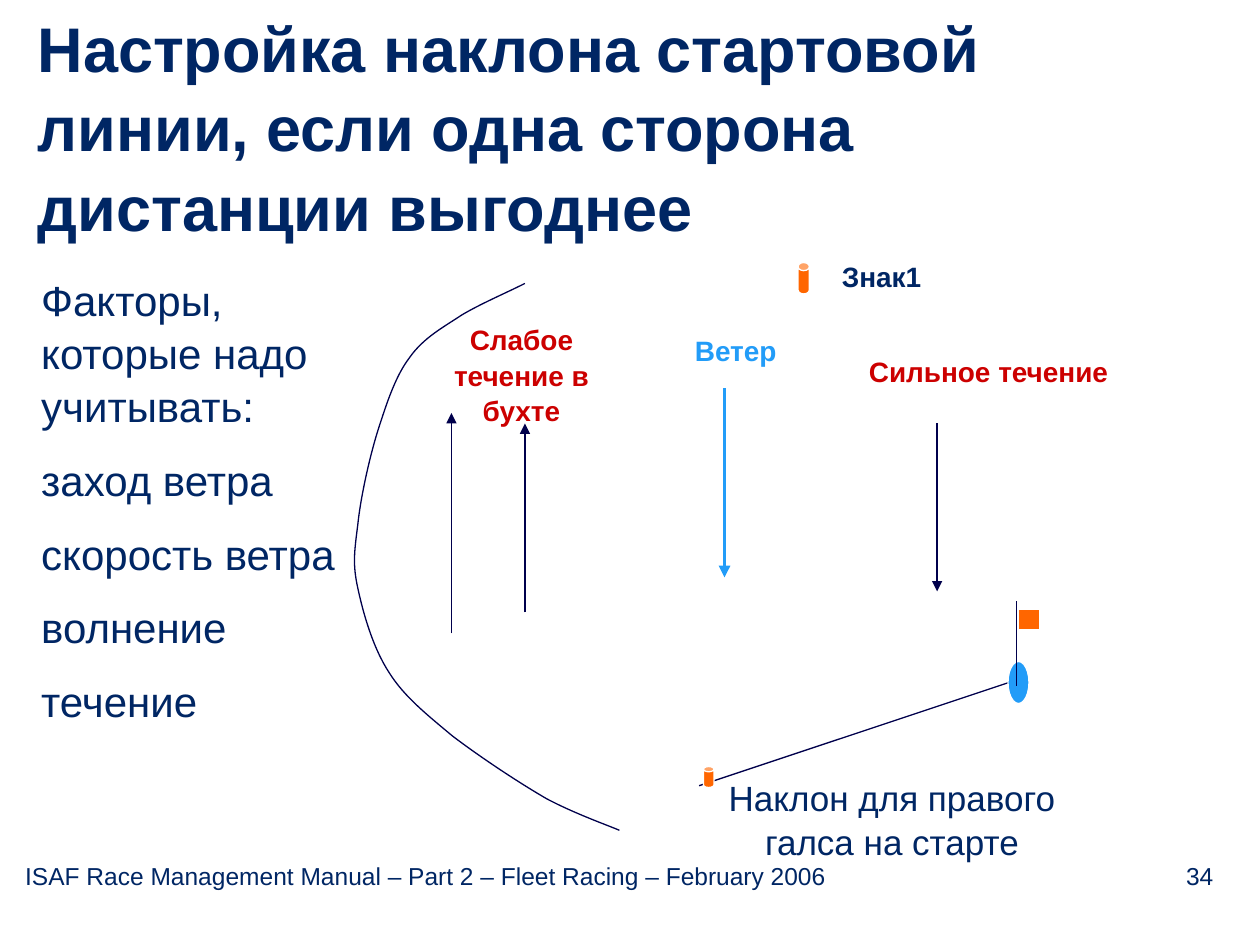
from dataclasses import dataclass

from lxml.etree import SubElement
from pptx import Presentation
from pptx.dml.color import RGBColor
from pptx.enum.shapes import MSO_CONNECTOR as Connector, MSO_SHAPE as Preset
from pptx.enum.text import MSO_ANCHOR as Anchor, PP_ALIGN as Align
from pptx.oxml.ns import qn
from pptx.util import Pt


@dataclass(frozen=True)
class Theme:
    font: str = "Arial"
    navy: RGBColor = RGBColor(0x00, 0x26, 0x64)
    ink: RGBColor = RGBColor(0x00, 0x00, 0x4C)
    red: RGBColor = RGBColor(0xCC, 0x00, 0x00)
    blue: RGBColor = RGBColor(0x22, 0x9C, 0xF8)
    orange: RGBColor = RGBColor(0xFF, 0x66, 0x00)
    white: RGBColor = RGBColor(0xFF, 0xFF, 0xFF)
    title_size: float = 36
    body_size: float = 24
    note_size: float = 20
    label_size: float = 16
    footer_size: float = 14
    line_spacing: float = 1.05
    thin: float = 0.75
    thick: float = 2.25


THEME = Theme()

# Start point, then two control points and an end point for each curve
SHORE = [
    (300, 162),
    (288, 168), (275, 173.5), (264, 180),
    (253.5, 187), (242, 193), (234, 204.5),
    (226, 215), (221, 230.5), (216, 246),
    (211, 262), (206, 285), (204.5, 300),
    (202.5, 315.5), (201.5, 322.5), (204.5, 336),
    (207.5, 350), (213, 370), (222.5, 384.5),
    (231, 398), (243.5, 408), (258.5, 420.5),
    (273.5, 432), (296, 447), (312.5, 456.5),
    (328.5, 465), (347, 471.5), (354, 474.5),
]


def points(values):
    return [Pt(value) for value in values]


def add_text(slide, box, paragraphs, size, color=THEME.navy, bold=False,
             align=Align.LEFT, anchor=Anchor.TOP, margins=None, right_tab=None):
    frame = slide.shapes.add_textbox(*points(box)).text_frame
    frame.word_wrap = True
    frame.vertical_anchor = anchor
    if margins is not None:
        frame.margin_left = frame.margin_right = Pt(margins)
        frame.margin_top = frame.margin_bottom = Pt(margins)
    for index, text in enumerate(paragraphs):
        paragraph = frame.add_paragraph() if index else frame.paragraphs[0]
        paragraph.text = text
        paragraph.alignment = align
        paragraph.line_spacing = THEME.line_spacing
        paragraph.space_before = Pt(size / 2 if index else 0)
        if right_tab is not None:
            tabs = SubElement(paragraph._p.get_or_add_pPr(), qn("a:tabLst"))
            SubElement(tabs, qn("a:tab"), pos=str(Pt(right_tab)), algn="r")
        font = paragraph.font
        font.name, font.size, font.bold = THEME.font, Pt(size), bold
        font.color.rgb = color


def add_label(slide, box, text, color, align=Align.LEFT):
    add_text(slide, box, [text], THEME.label_size, color, True, align)


def add_line(slide, start, end, color=THEME.ink, width=THEME.thin, arrow=False):
    line = slide.shapes.add_connector(
        Connector.STRAIGHT, *points(start), *points(end))
    line.line.color.rgb = color
    line.line.width = Pt(width)
    if arrow:
        SubElement(line.line._get_or_add_ln(), qn("a:tailEnd"), type="triangle")
    SubElement(line._element.spPr, qn("a:effectLst"))


def add_preset(slide, preset, box, color, adjustment=None):
    shape = slide.shapes.add_shape(preset, *points(box))
    shape.shadow.inherit = False
    shape.fill.solid()
    shape.fill.fore_color.rgb = color
    shape.line.color.rgb = THEME.white
    shape.line.width = Pt(THEME.thin)
    if adjustment is not None:
        shape.adjustments[0] = adjustment


def add_curve(slide, vertices):
    start, *rest = [points(vertex) for vertex in vertices]
    builder = slide.shapes.build_freeform(*start)
    builder.add_line_segments(rest, close=False)
    shape = builder.convert_to_shape()
    shape.shadow.inherit = False
    shape.fill.background()
    shape.line.color.rgb = THEME.ink
    shape.line.width = Pt(THEME.thin)
    # Turn every three straight segments into one Bézier segment
    path = next(shape._element.iter(qn("a:path")))
    segments = path.findall(qn("a:lnTo"))
    for first in range(0, len(segments), 3):
        curve = SubElement(path, qn("a:cubicBezTo"))
        for segment in segments[first:first + 3]:
            curve.append(segment[0])
            path.remove(segment)


def main():
    presentation = Presentation()
    presentation.slide_width, presentation.slide_height = Pt(720), Pt(540)
    slide = presentation.slides.add_slide(presentation.slide_layouts[6])

    # Footer and title
    add_text(slide, (14.4, 491, 692, 16.5),
             ["ISAF Race Management Manual – Part 2 – Fleet Racing – February 2006\t34"],
             THEME.footer_size, margins=0, right_tab=679)
    add_text(slide, (14.4, 2, 680.5, 138.5),
             ["Настройка наклона стартовой линии, если одна сторона дистанции выгоднее"],
             THEME.title_size, bold=True, anchor=Anchor.MIDDLE)

    # Shore and labels
    add_curve(slide, SHORE)
    add_label(slide, (247, 180, 102, 65.5), "Слабое течение в бухте",
              THEME.red, Align.CENTER)
    add_label(slide, (489.5, 198, 160, 26.5), "Сильное течение", THEME.red)
    add_label(slide, (390, 186, 90, 26.5), "Ветер", THEME.blue)

    # Wind and current arrows
    add_line(slide, (414, 222), (414, 330), THEME.blue, THEME.thick, arrow=True)
    add_line(slide, (535.5, 242), (535.5, 338), arrow=True)
    add_line(slide, (300, 350), (300, 242), arrow=True)
    add_line(slide, (258, 362), (258, 236), arrow=True)

    # Start line with committee boat and pin
    add_line(slide, (579.5, 389), (399.5, 449))
    add_preset(slide, Preset.OVAL, (576, 378, 12, 24), THEME.blue)
    add_text(slide, (388, 439, 243.5, 55.5), ["Наклон для правого галса на старте"],
             THEME.note_size, align=Align.CENTER)
    add_preset(slide, Preset.CAN, (402, 438, 6, 12), THEME.orange, 0.5)

    # Windward mark
    add_preset(slide, Preset.CAN, (456, 150, 6.5, 18), THEME.orange, 0.72)
    add_label(slide, (474, 144, 84, 26.5), "Знак1", THEME.navy)

    # Flag on the committee boat
    add_line(slide, (581, 392), (581, 343.5))
    add_preset(slide, Preset.RECTANGLE, (582, 348, 12, 12), THEME.orange)

    # Factors
    add_text(slide, (16.5, 152, 186, 269),
             ["Факторы, которые надо учитывать:", "заход ветра",
              "скорость ветра", "волнение", "течение"], THEME.body_size)

    presentation.save("out.pptx")


if __name__ == "__main__":
    main()
